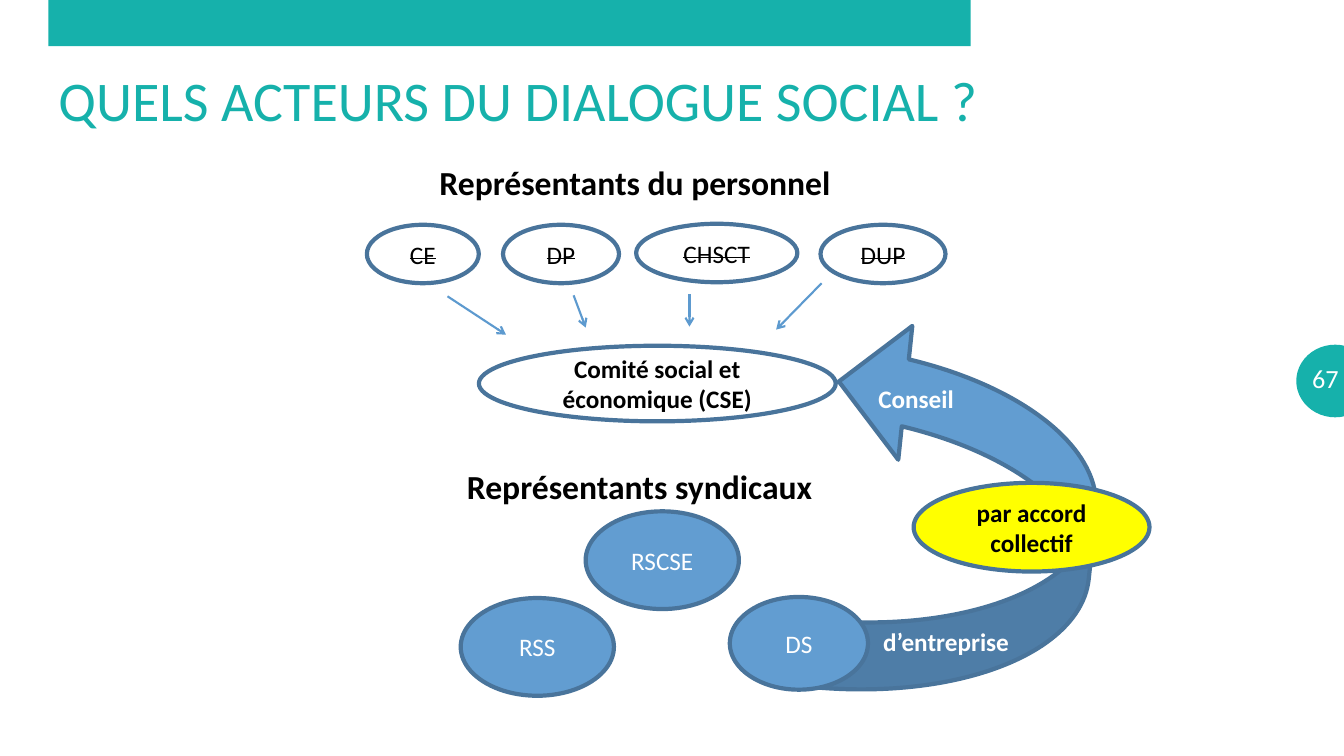
from lxml.etree import SubElement
from pptx import Presentation
from pptx.dml.color import RGBColor
from pptx.enum.shapes import MSO_CONNECTOR, MSO_SHAPE
from pptx.enum.text import MSO_ANCHOR, PP_ALIGN
from pptx.oxml.ns import qn
from pptx.util import Inches, Pt

WIDTH, HEIGHT = 13.33, 7.5
COLUMN, ROW = WIDTH / 100, HEIGHT / 100
COLORS = {"teal": "16B1AB", "blue": "629DD1", "outline": "49749B", "arrow": "5D9ACF",
          "white": "FFFFFF", "black": "000000", "yellow": "FFFF00"}
BODY = {"name": "Calibri", "size": Pt(18)}
STRONG = {**BODY, "bold": True}
HEADING = {**STRONG, "size": Pt(24)}
TITLE = {**BODY, "size": Pt(40)}
NUMBER = {**BODY, "size": Pt(18.7)}


def color(name):
    return RGBColor.from_string(COLORS[name])


def apply(target, values):
    for name, value in values.items():
        setattr(target, name, value)


def place(box, left, top, width, height):
    return (Inches((box[0] + left) * COLUMN), Inches((box[1] + top) * ROW),
            Inches(width * COLUMN), Inches(height * ROW))


def write(shape, text, ink, font=BODY, align=PP_ALIGN.CENTER, strike=False, **frame):
    apply(shape.text_frame, {"word_wrap": True, **frame})
    paragraph = shape.text_frame.paragraphs[0]
    paragraph.alignment = align
    run = paragraph.add_run()
    run.text = text
    apply(run.font, font)
    run.font.color.rgb = color(ink)
    if strike:
        run._r.get_or_add_rPr().set("strike", "sngStrike")


def add_figure(slide, kind, position, fill, outline=None, weight=3):
    shape = slide.shapes.add_shape(kind, *position)
    shape.shadow.inherit = False
    shape.fill.solid()
    shape.fill.fore_color.rgb = color(fill)
    if outline:
        shape.line.color.rgb = color(outline)
        shape.line.width = Pt(weight)
    else:
        shape.line.fill.background()
    return shape


def add_oval(slide, position, fill, text, ink, **style):
    oval = add_figure(slide, MSO_SHAPE.OVAL, position, fill, "outline")
    write(oval, text, ink, vertical_anchor=MSO_ANCHOR.MIDDLE, **style)


def add_label(slide, position, text, ink, **style):
    write(slide.shapes.add_textbox(*position), text, ink, **style)


def add_arrow(slide, box, start, end):
    points = [Inches(value) for column, row in (start, end)
              for value in ((box[0] + column) * COLUMN, (box[1] + row) * ROW)]
    connector = slide.shapes.add_connector(MSO_CONNECTOR.STRAIGHT, *points)
    connector.line.color.rgb = color("arrow")
    connector.line.width = Pt(1.5)
    SubElement(connector.line._get_or_add_ln(), qn("a:tailEnd"), type="arrow")
    SubElement(connector._element.spPr, qn("a:effectLst"))


def header(slide, box):
    add_figure(slide, MSO_SHAPE.RECTANGLE, place(box, 0, 0, 68.63, 6.1), "teal")
    title = slide.shapes.title
    apply(title, dict(zip(("left", "top", "width", "height"), place(box, 0, 8, 92.9, 10.3))))
    write(title, "QUELS ACTEURS DU DIALOGUE SOCIAL ?", "teal", font=TITLE,
          align=PP_ALIGN.LEFT, vertical_anchor=MSO_ANCHOR.MIDDLE)


def page_number(slide, box):
    add_figure(slide, MSO_SHAPE.OVAL, place(box, 0.3, 0, 5.63, 9.33), "teal", "teal", 1.5)
    add_label(slide, place(box, 0, 1.6, 4.35, 5.33), "67", "white", font=NUMBER,
              align=PP_ALIGN.RIGHT, vertical_anchor=MSO_ANCHOR.MIDDLE,
              margin_left=Inches(0.13), margin_right=Inches(0.13),
              margin_top=Inches(0.07), margin_bottom=Inches(0.07))


def council_arrow(slide, box):
    arrow = add_figure(slide, MSO_SHAPE.CURVED_UP_ARROW, place(box, 0, 0.27, 27.83, 35.6),
                       "blue", "outline")
    arrow.rotation = 276


def council_labels(slide, box):
    for text, left, top, width in (("Conseil", 7.08, 0, 7.35),
                                   ("d’entreprise", 7.45, 32.13, 13.35)):
        add_label(slide, place(box, left, top, width, 5.33), text, "white",
                  font=STRONG, align=PP_ALIGN.LEFT)
    add_oval(slide, place(box, 10.45, 13.87, 17.55, 11.73), "yellow",
             "par accord collectif", "black", font=STRONG)


def staff_representatives(slide, box):
    add_label(slide, place(box, 4.5, 0, 30.9, 6.67), "Représentants du personnel", "black",
              font=HEADING, word_wrap=False)
    for text, left, top, width in (("CE", 0, 8.93, 8.33), ("DP", 10.13, 8.93, 8.63),
                                   ("CHSCT", 20.03, 8.8, 12), ("DUP", 33.75, 8.93, 9.3)):
        add_oval(slide, place(box, left, top, width, 7.73), "white", text, "black", strike=True)
    for start, end in (((6, 18.4), (10.35, 23.47)), ((15.38, 18.27), (16.28, 22.53)),
                       ((24, 18.13), (24, 22.4)), ((33.83, 16.67), (30.45, 22.8))):
        add_arrow(slide, box, start, end)
    add_oval(slide, place(box, 8.33, 24.93, 26.55, 10), "white",
             "Comité social et économique (CSE)", "black", font=STRONG)


def union_representatives(slide, box):
    add_label(slide, place(box, 0, 0, 28.05, 6.67), "Représentants syndicaux", "black",
              font=HEADING, align=PP_ALIGN.LEFT, word_wrap=False)
    for text, *position in (("DS", 20.3, 18.03, 10.28, 12.27),
                            ("RSCSE", 9.58, 6.7, 11.4, 12.93),
                            ("RSS", 0.28, 18.17, 11.4, 12.93)):
        add_oval(slide, place(box, *position), "blue", text, "white")


def main():
    presentation = Presentation()
    presentation.slide_width, presentation.slide_height = Inches(WIDTH), Inches(HEIGHT)
    slide = presentation.slides.add_slide(presentation.slide_layouts[5])
    council = (57.53, 50)
    header(slide, (3.6, 0))
    page_number(slide, (96.23, 45.73))
    council_arrow(slide, council)
    staff_representatives(slide, (27.3, 20.8))
    union_representatives(slide, (34, 60.93))
    council_labels(slide, council)
    presentation.save("out.pptx")


if __name__ == "__main__":
    main()
